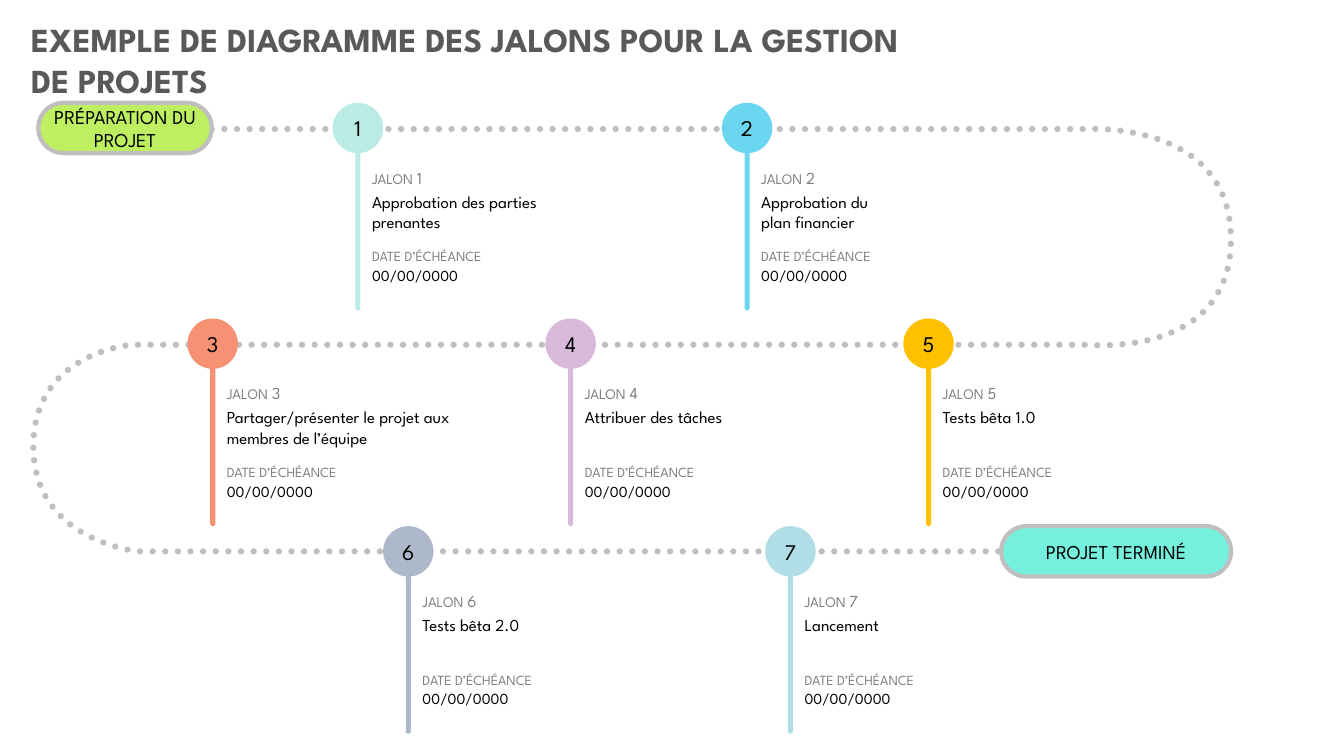
from pptx import Presentation
from pptx.dml.color import RGBColor
from pptx.enum.dml import MSO_LINE
from pptx.enum.shapes import MSO_SHAPE
from pptx.enum.text import MSO_ANCHOR, MSO_AUTO_SIZE, PP_ALIGN
from pptx.oxml.ns import qn
from pptx.util import Inches, Pt

ROUND_DOT = MSO_LINE.ROUND_DOT
OVAL, PILL = MSO_SHAPE.OVAL, MSO_SHAPE.ROUNDED_RECTANGLE
TOP, MIDDLE = MSO_ANCHOR.TOP, MSO_ANCHOR.MIDDLE
LEFT, CENTER = PP_ALIGN.LEFT, PP_ALIGN.CENTER
NO_AUTOFIT = MSO_AUTO_SIZE.NONE

FONT = "League Spartan"
CELL = 0.1  # inches: the slide is a grid of 133.3 columns by 75 rows
COLORS = {
    "title": "595959", "label": "808080", "text": "000000", "trail": "BFBFBF",
    "start": "BEEF60", "finish": "75F0DC",
    "mint": "BBEBE5", "sky": "6BD6F0", "coral": "F79173", "lilac": "D9B9D9",
    "amber": "FFC000", "slate": "ADB9CA", "ice": "B1DDE6",
}
NO_MARGINS = {"margin_left": 0, "margin_right": 0, "margin_top": 0, "margin_bottom": 0}
FRAME = {"word_wrap": True, "auto_size": NO_AUTOFIT, "vertical_anchor": TOP}
NODE_SIZE = 5
ROW_TOPS = (10.2, 31.6, 52.2)
DUE_LABEL, DUE_DATE = "DATE D’ÉCHÉANCE", "00/00/0000"

# Row, column, colour, description, description width
MILESTONES = [
    (0, 33, "mint", "Approbation des parties prenantes", 18.7),
    (0, 71.6, "sky", "Approbation du plan financier", 13.7),
    (1, 18.6, "coral", "Partager/présenter le projet aux membres de l’équipe", 23.4),
    (1, 54.1, "lilac", "Attribuer des tâches", 13.7),
    (1, 89.6, "amber", "Tests bêta 1.0", 13.7),
    (2, 38, "slate", "Tests bêta 2.0", 13.7),
    (2, 75.9, "ice", "Lancement", 13.7),
]


def cells(*counts):
    return [Inches(count * CELL) for count in counts]


def color(name):
    return RGBColor.from_string(COLORS[name])


def apply(target, values):
    for attribute, value in values.items():
        setattr(target, attribute, value)


def write(frame, runs, color_name, align=LEFT, bold=False, **frame_format):
    """Fill a text frame with one paragraph of (text, size) runs."""
    apply(frame, {**FRAME, **frame_format})
    paragraph = frame.paragraphs[0]
    paragraph.alignment = align
    for text, size in runs:
        run = paragraph.add_run()
        run.text = text
        apply(run.font, {"name": FONT, "size": Pt(size), "bold": bold})
        run.font.color.rgb = color(color_name)


def add_text(shapes, box, runs, color_name):
    write(shapes.add_textbox(*cells(*box)).text_frame, runs, color_name, **NO_MARGINS)


def add_block(shapes, kind, box, fill, runs=(), outlined=False):
    block = shapes.add_shape(kind, *cells(*box))
    block.shadow.inherit = False
    block.fill.solid()
    block.fill.fore_color.rgb = color(fill)
    if kind == PILL:
        block.adjustments[0] = 0.5
    if outlined:
        block.line.color.rgb = color("trail")
        block.line.width = Pt(3)
    else:
        block.line.fill.background()
    if runs:
        write(block.text_frame, runs, "text", CENTER,
              **{**NO_MARGINS, "vertical_anchor": MIDDLE})


def add_title(slide, box):
    title = slide.shapes.title
    apply(title, dict(zip(("left", "top", "width", "height"), cells(*box))))
    write(title.text_frame,
          [("EXEMPLE DE DIAGRAMME DES JALONS POUR LA GESTION DE PROJETS", 24)],
          "title", bold=True)


def curve(start, first, second, end, steps=24):
    """Points along a cubic Bézier curve, after its start."""
    points = []
    for step in range(1, steps + 1):
        t = step / steps
        weights = ((1 - t) ** 3, 3 * t * (1 - t) ** 2, 3 * t * t * (1 - t), t ** 3)
        points.append(tuple(
            sum(w * p[axis] for w, p in zip(weights, (start, first, second, end)))
            for axis in (0, 1)))
    return points


def add_trail(shapes, box):
    left, top, right, bottom = box[0], box[1], box[0] + box[2], box[1] + box[3]
    middle = top + 21.4
    start, finish = (left + 17.7, top), (right - 19.3, bottom)
    # Right-hand turn, then left-hand turn: entry, outermost point, exit
    right_in, right_tip, right_out = (right - 14.8, top), (right, top + 10.9), (right - 14.3, middle)
    left_in, left_tip, left_out = (left + 9.8, middle), (left, middle + 10.1), (left + 10.4, bottom)
    points = [
        right_in,
        *curve(right_in, right_in, (right, top - 1.1), right_tip),
        *curve(right_tip, (right, top + 22.9), right_out, right_out),
        left_in,
        *curve(left_in, left_in, (left, middle + 0.7), left_tip),
        *curve(left_tip, (left, bottom - 1), left_out, left_out),
        finish,
    ]
    builder = shapes.build_freeform(*cells(*start))
    builder.add_line_segments([cells(*point) for point in points], close=False)
    trail = builder.convert_to_shape()
    trail.shadow.inherit = False
    trail.fill.background()
    trail.line.color.rgb = color("trail")
    apply(trail.line, {"width": Pt(4.5), "dash_style": ROUND_DOT})
    trail.element.spPr.find(qn("a:ln")).set("cap", "rnd")


def add_milestone(slide, number, left, top, fill, description, width):
    shapes = slide.shapes.add_group_shape().shapes
    text_left = left + 3.9
    # Stem
    add_block(shapes, PILL, (left + 2.25, top + 1.9, 0.5, 18.7), fill)
    # Details
    add_text(shapes, (text_left, top + 6.4, 11.7, 2.6),
             [("JALON", 10.5), (" ", 11), (str(number), 12)], "label")
    add_text(shapes, (text_left, top + 8.8, width, 5.7), [(description, 12)], "text")
    add_text(shapes, (text_left, top + 14.4, 15, 2), [(DUE_LABEL, 10)], "label")
    add_text(shapes, (text_left, top + 16.2, 9, 2.6), [(DUE_DATE, 11)], "text")
    # Numbered node
    add_block(shapes, OVAL, (left, top, NODE_SIZE, NODE_SIZE), fill, [(str(number), 16)])


def main():
    deck = Presentation()
    deck.slide_width, deck.slide_height = cells(133.3, 75)
    slide = deck.slides.add_slide(deck.slide_layouts[5])
    add_title(slide, (2.1, 1.4, 89.1, 5))
    add_trail(slide.shapes, (3.3, 12.8, 118.8, 41.9))
    add_block(slide.shapes, PILL, (3.8, ROW_TOPS[0], 17.2, NODE_SIZE), "start",
              [("PRÉPARATION DU PROJET", 14)], outlined=True)
    for number, (row, left, fill, description, width) in enumerate(MILESTONES, 1):
        add_milestone(slide, number, left, ROW_TOPS[row], fill, description, width)
    add_block(slide.shapes, PILL, (99.3, ROW_TOPS[2], 22.8, NODE_SIZE), "finish",
              [("PROJET TERMINÉ", 14)], outlined=True)
    deck.save("out.pptx")


if __name__ == "__main__":
    main()
